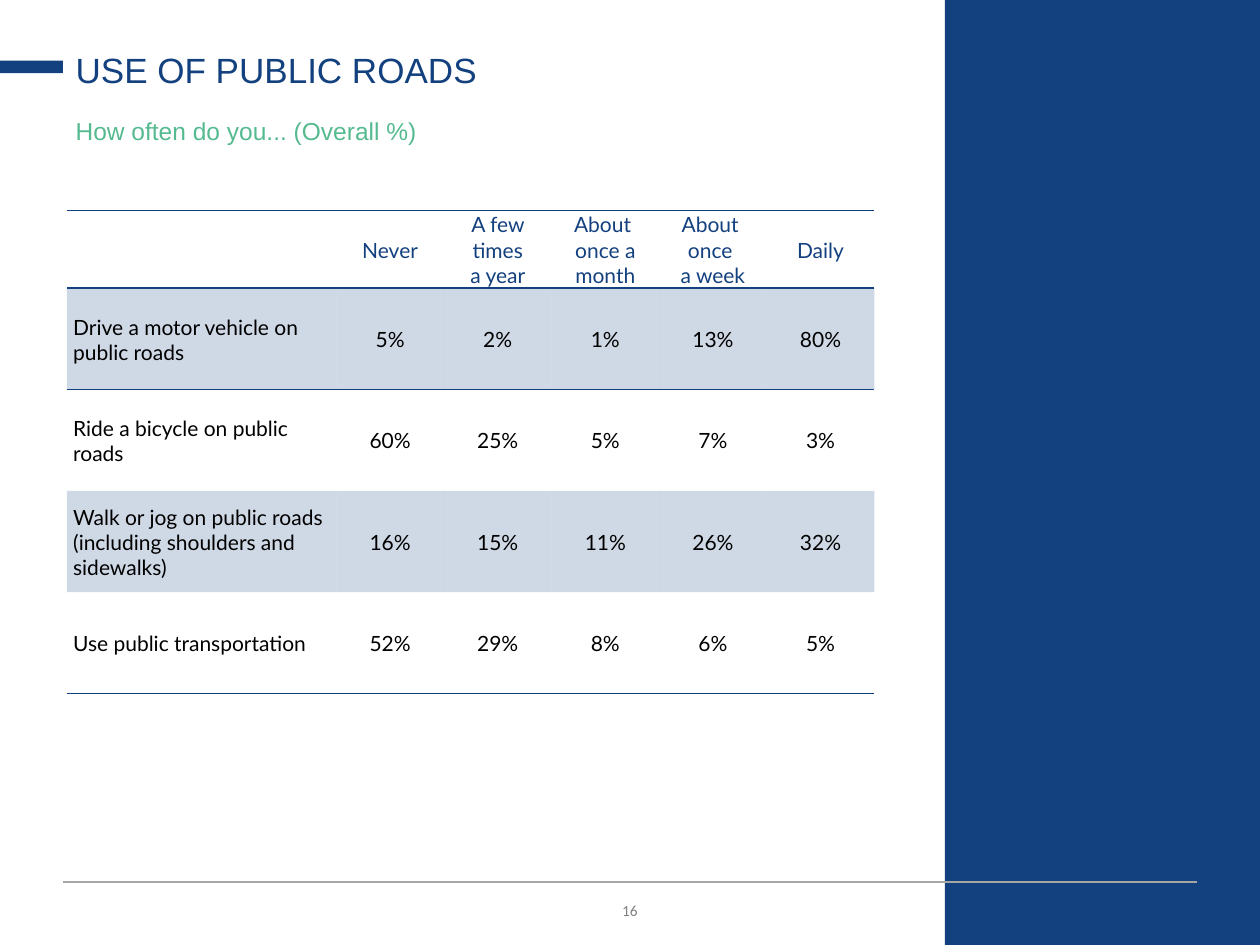
from lxml.etree import SubElement
from pptx import Presentation
from pptx.dml.color import RGBColor
from pptx.enum.shapes import MSO_CONNECTOR as Connector, MSO_SHAPE as Shape
from pptx.enum.text import MSO_ANCHOR as Anchor, MSO_AUTO_SIZE as AutoSize, PP_ALIGN as Align
from pptx.oxml import parse_xml
from pptx.oxml.ns import nsdecls, qn
from pptx.util import Pt

NAVY = RGBColor(0x13, 0x40, 0x7E)
GREEN = RGBColor(0x55, 0xBA, 0x8F)
GRAY = RGBColor(0x80, 0x80, 0x80)
RULE_GRAY = RGBColor(0xA6, 0xA6, 0xA6)
BLACK = RGBColor(0, 0, 0)
NO_STYLE = "{2D5ABB26-0587-4C30-8999-92F81FD0307C}"

HEADER = ["", "Never", "A few times\na year", "About \nonce a month",
          "About \nonce \na week", "Daily"]
ROWS = [
    ["Drive a motor vehicle on public roads", "5%", "2%", "1%", "13%", "80%"],
    ["Ride a bicycle on public roads", "60%", "25%", "5%", "7%", "3%"],
    ["Walk or jog on public roads (including shoulders and sidewalks)",
     "16%", "15%", "11%", "26%", "32%"],
    ["Use public transportation", "52%", "29%", "8%", "6%", "5%"],
]


class SlideBuilder:
    heading_font = "Arial"
    table_font = "Lato"
    number_font = "Calibri"

    def __init__(self, page):
        self.page = page

    def add_span(self, para, text, font, size, color, align=Align.LEFT):
        para.alignment = align
        span = para.add_run()
        span.text = text
        span.font.name = font
        span.font.size = Pt(size)
        span.font.color.rgb = color
        return span

    def placeholder(self, box, bounds, text, size, color, anchor):
        box.left, box.top, box.width, box.height = map(Pt, bounds)
        frame = box.text_frame
        frame.auto_size = AutoSize.NONE
        frame.vertical_anchor = anchor
        para = frame.paragraphs[0]
        para.line_spacing = 0.9
        para.space_before = Pt(0)
        props = para._p.get_or_add_pPr()
        props.set("marL", "0")
        props.set("indent", "0")
        SubElement(props, qn("a:buNone"))
        self.add_span(para, text, self.heading_font, size, color)

    def bar(self, left, top, width, height):
        box = self.page.shapes.add_shape(
            Shape.RECTANGLE, Pt(left), Pt(top), Pt(width), Pt(height))
        box.shadow.inherit = False
        box.fill.solid()
        box.fill.fore_color.rgb = NAVY
        box.line.fill.background()

    def rule(self, left, right, y):
        line = self.page.shapes.add_connector(
            Connector.STRAIGHT, Pt(left), Pt(y), Pt(right), Pt(y))
        line.line.color.rgb = RULE_GRAY
        line.line.width = Pt(0.75)
        SubElement(line._element.spPr, qn("a:effectLst"))

    def page_number(self, text, left, top, width, height):
        box = self.page.shapes.add_textbox(Pt(left), Pt(top), Pt(width), Pt(height))
        frame = box.text_frame
        frame.word_wrap = True
        frame.vertical_anchor = Anchor.MIDDLE
        span = self.add_span(
            frame.paragraphs[0], text, self.number_font, 11, GRAY, Align.CENTER)
        span._r.get_or_add_rPr().set("cap", "small")

    def border(self, cell, *sides):
        props = cell._tc.get_or_add_tcPr()
        for index, side in enumerate(sides):
            props.insert(index, parse_xml(
                f'<a:ln{side} {nsdecls("a")} w="{Pt(1)}"><a:solidFill>'
                f'<a:srgbClr val="{NAVY}"/></a:solidFill></a:ln{side}>'))

    def fill_cell(self, cell, shaded):
        if not shaded:
            cell.fill.background()
            return
        cell.fill.solid()
        cell.fill.fore_color.rgb = NAVY
        color = cell._tc.tcPr.find(".//" + qn("a:srgbClr"))
        SubElement(color, qn("a:alpha")).set("val", "20000")

    def cell_text(self, cell, text, color, align, left_margin):
        cell.vertical_anchor = Anchor.MIDDLE
        cell.margin_left = Pt(left_margin)
        cell.margin_top = cell.margin_right = Pt(0.75)
        cell.margin_bottom = Pt(0)
        frame = cell.text_frame
        for index, line in enumerate(text.split("\n")):
            para = frame.add_paragraph() if index else frame.paragraphs[0]
            if line:
                self.add_span(para, line, self.table_font, 12, color, align)

    def table(self, left, top, widths, heights, rows):
        frame = self.page.shapes.add_table(
            len(rows), len(widths), Pt(left), Pt(top), Pt(sum(widths)), Pt(sum(heights)))
        table = frame.table
        table.first_row = table.horz_banding = False
        table._tbl.tblPr.find(qn("a:tableStyleId")).text = NO_STYLE
        for column, width in zip(table.columns, widths):
            column.width = Pt(width)
        for row, height in zip(table.rows, heights):
            row.height = Pt(height)
        last = len(rows) - 1
        for r, values in enumerate(rows):
            for c, text in enumerate(values):
                cell = table.cell(r, c)
                self.cell_text(cell, text, BLACK if r else NAVY,
                               Align.CENTER if c else Align.LEFT, 0.75 if c else 3.6)
                self.fill_cell(cell, r % 2 == 1)
                if r == 0:
                    self.border(cell, "T", "B")
                elif r == 1:
                    self.border(cell, "T")
                elif r == last:
                    self.border(cell, "B")


def main():
    deck = Presentation()
    deck.slide_width, deck.slide_height = Pt(720), Pt(540)
    page = deck.slides.add_slide(deck.slide_layouts[1])
    builder = SlideBuilder(page)
    builder.page_number("16", 36, 508.3, 648, 21.6)
    builder.bar(540, 0, 180, 540)
    builder.rule(36, 684, 504)
    builder.bar(0, 34.6, 36, 7.2)
    builder.placeholder(page.placeholders[1], (36, 64.8, 482.4, 48.2),
                        "How often do you... (Overall %)", 14, GREEN, Anchor.TOP)
    builder.placeholder(page.shapes.title, (36, 20.9, 482.4, 34.6),
                        "USE OF PUBLIC ROADS", 20, NAVY, Anchor.BOTTOM)
    builder.table(38.2, 120.2, [154] + [61.5] * 5, [44.5] + [57.9] * 4, [HEADER] + ROWS)
    deck.save("out.pptx")


if __name__ == "__main__":
    main()
